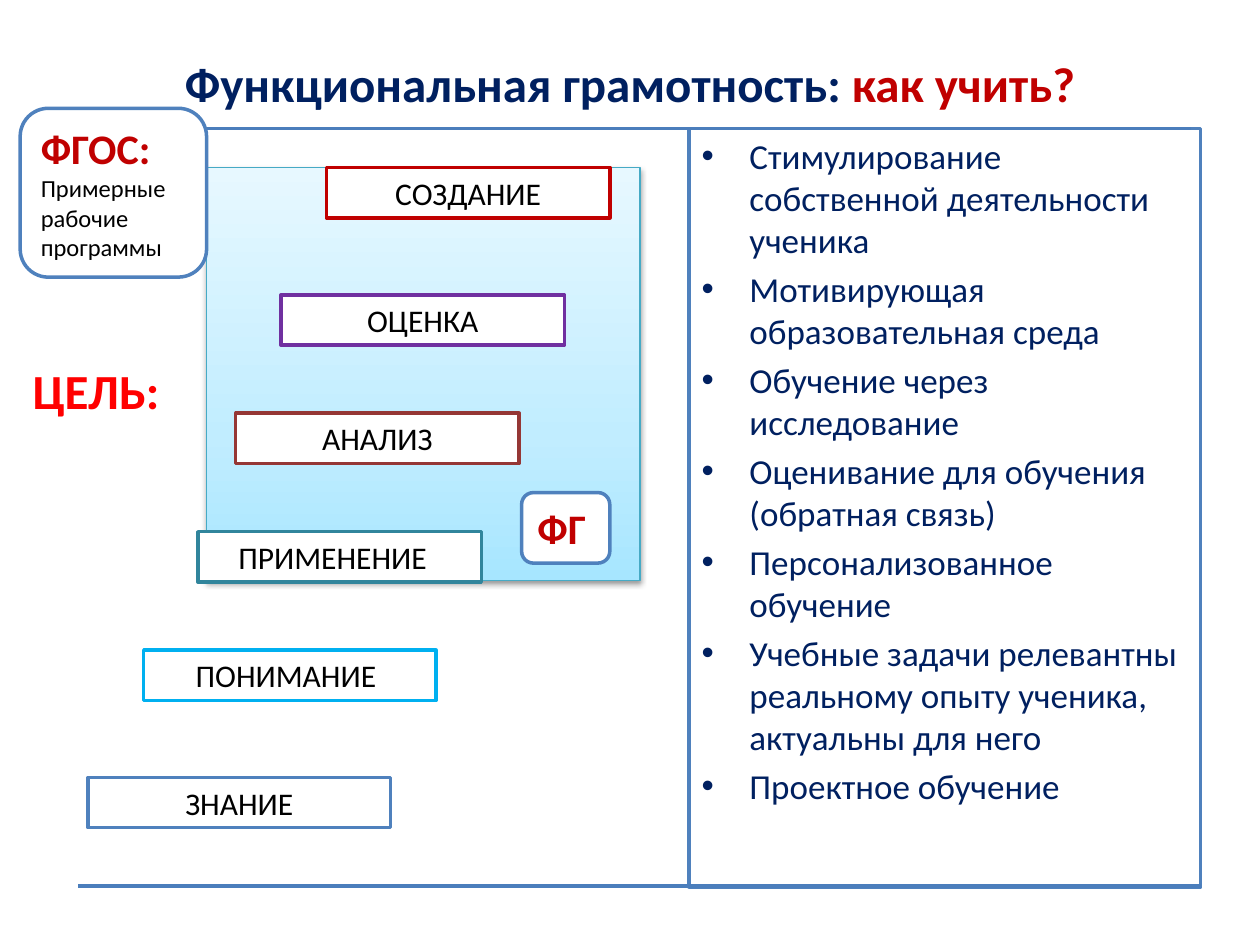
from lxml.etree import SubElement
from pptx import Presentation
from pptx.dml.color import RGBColor
from pptx.enum.shapes import MSO_CONNECTOR as LINE, MSO_SHAPE as SHAPE
from pptx.enum.text import MSO_ANCHOR as ANCHOR, PP_ALIGN as ALIGN
from pptx.oxml.ns import qn
from pptx.util import Inches, Pt

COLORS = {
    "white": "FFFFFF", "black": "000000", "navy": "002060", "dark_red": "C00000",
    "red": "FF0000", "blue": "4F81BD", "rule": "4B7EBC", "sky": "00B0F0",
    "teal": "31859C", "brown": "953735", "purple": "7030A0", "aqua": "46AAC5",
}
SKY_GRADIENT = [(0, "A7E6FF"), (35, "C1EDFF"), (100, "E7F8FF")]
COLUMNS, ROWS = 100, 75


class SlideBuilder:
    """Places elements on a grid of 100 columns by 75 rows."""

    font = "Calibri"

    def __init__(self, deck):
        self.page = deck.slides.add_slide(deck.slide_layouts[6])
        self.column = deck.slide_width / COLUMNS
        self.row = deck.slide_height / ROWS

    def place(self, left, top, width, height):
        return (round(left * self.column), round(top * self.row),
                round(width * self.column), round(height * self.row))

    def color(self, name):
        return RGBColor.from_string(COLORS[name])

    def add_spans(self, para, spans, align=ALIGN.LEFT):
        """Each span is (text, size, colour, bold)."""
        para.alignment = align
        for text, size, color, bold in spans:
            span = para.add_run()
            span.text = text
            span.font.name = self.font
            span.font.size = Pt(size)
            span.font.bold = bold
            span.font.color.rgb = self.color(color)

    def box(self, area, line, width=2, kind=SHAPE.RECTANGLE, anchor=ANCHOR.TOP):
        shape = self.page.shapes.add_shape(kind, *self.place(*area))
        shape.shadow.inherit = False
        shape.fill.solid()
        shape.fill.fore_color.rgb = self.color("white")
        shape.line.color.rgb = self.color(line)
        shape.line.width = Pt(width)
        shape.text_frame.word_wrap = True
        shape.text_frame.vertical_anchor = anchor
        return shape

    def gradient_panel(self, area, stops, line):
        shape = self.box(area, line, 0.75)
        shape.fill.gradient()
        shape.fill.gradient_angle = 90
        properties = shape.element.spPr
        stop_list = properties.find(qn("a:gradFill")).find(qn("a:gsLst"))
        stop_list.clear()
        for position, color in stops:
            stop = SubElement(stop_list, qn("a:gs"), pos=str(position * 1000))
            SubElement(stop, qn("a:srgbClr"), val=color)
        # Soft shadow straight below
        shadow = SubElement(properties.find(qn("a:effectLst")), qn("a:outerShdw"),
                            blurRad=str(Pt(3.1)), dist=str(Pt(1.6)),
                            dir="5400000", rotWithShape="0")
        tint = SubElement(shadow, qn("a:srgbClr"), val=COLORS["black"])
        SubElement(tint, qn("a:alpha"), val="38000")

    def label(self, area, spans, align=ALIGN.LEFT, wrap=True):
        frame = self.page.shapes.add_textbox(*self.place(*area)).text_frame
        frame.word_wrap = wrap
        frame.vertical_anchor = ANCHOR.MIDDLE
        self.add_spans(frame.paragraphs[0], spans, align)

    def step(self, area, text, line, right_inset):
        frame = self.box(area, line).text_frame
        frame.margin_right = Inches(right_inset)
        self.add_spans(frame.paragraphs[0], [(text, 18, "black", False)], ALIGN.CENTER)

    def badge(self, area, spans):
        shape = self.box(area, "blue", kind=SHAPE.ROUNDED_RECTANGLE)
        self.add_spans(shape.text_frame.paragraphs[0], spans)

    def bullets(self, area, items):
        frame = self.box(area, "blue").text_frame
        for index, item in enumerate(items):
            para = frame.add_paragraph() if index else frame.paragraphs[0]
            para.space_before = Pt(4)
            self.add_spans(para, [(item, 20, "navy", False)])
            properties = para._p.get_or_add_pPr()
            properties.set("marL", str(Inches(0.38)))
            properties.set("indent", str(Inches(-0.38)))
            SubElement(properties, qn("a:buFont"), typeface="Arial")
            SubElement(properties, qn("a:buChar"), char="•")

    def rule(self, left, right, row):
        start_x, y, width, _ = self.place(left, row, right - left, 0)
        line = self.page.shapes.add_connector(LINE.STRAIGHT, start_x, y, start_x + width, y)
        line.line.color.rgb = self.color("rule")
        line.line.width = Pt(2.25)
        SubElement(line.element.spPr, qn("a:effectLst"))


METHODS = [
    "Стимулирование собственной деятельности ученика",
    "Мотивирующая образовательная среда",
    "Обучение через исследование",
    "Оценивание для обучения (обратная связь)",
    "Персонализованное обучение",
    "Учебные задачи релевантны реальному опыту ученика, актуальны для него",
    "Проектное обучение",
]
# Text, left, top, width, outline, right inset
STEPS = [
    ("ЗНАНИЕ", 7, 61.7, 24, "blue", 0.1),
    ("ПОНИМАНИЕ", 11.4, 51.6, 23.2, "sky", 0.16),
    ("ПРИМЕНЕНИЕ", 15.7, 42.2, 22.5, "teal", 0.21),
    ("АНАЛИЗ", 18.7, 32.8, 22.5, "brown", 0.1),
    ("ОЦЕНКА", 22.3, 23.4, 22.5, "purple", 0.1),
    ("СОЗДАНИЕ", 25.9, 13.3, 22.5, "dark_red", 0.1),
]


def main():
    deck = Presentation()
    deck.slide_width, deck.slide_height = Inches(10), Inches(7.5)
    slide = SlideBuilder(deck)

    # Background panel and title
    slide.gradient_panel((16.4, 13.3, 34.4, 32.8), SKY_GRADIENT, "aqua")
    slide.label((5, 3, 90, 7.2), [("Функциональная грамотность: ", 28, "navy", True),
                                  ("как учить?", 28, "dark_red", True)], ALIGN.CENTER)

    # Teaching methods and frame lines
    slide.bullets((54.7, 10.2, 40.6, 60.2), METHODS)
    slide.rule(5.5, 94.5, 10.2)
    slide.rule(6.2, 95.3, 70.3)

    # Staircase of learning goals
    for text, left, top, width, line, right_inset in STEPS:
        slide.step((left, top, width, 4), text, line, right_inset)

    # Goal label and badges
    slide.label((1.6, 28.1, 12.2, 5.7), [("ЦЕЛЬ:", 28, "red", True)], wrap=False)
    slide.badge((1.6, 8.6, 14.8, 13.4), [("ФГОС: ", 24, "dark_red", True),
                                         ("Примерные рабочие программы", 14, "black", False)])
    slide.badge((41.4, 39.1, 7, 5.6), [("ФГ", 24, "dark_red", True)])

    deck.save("out.pptx")


if __name__ == "__main__":
    main()
